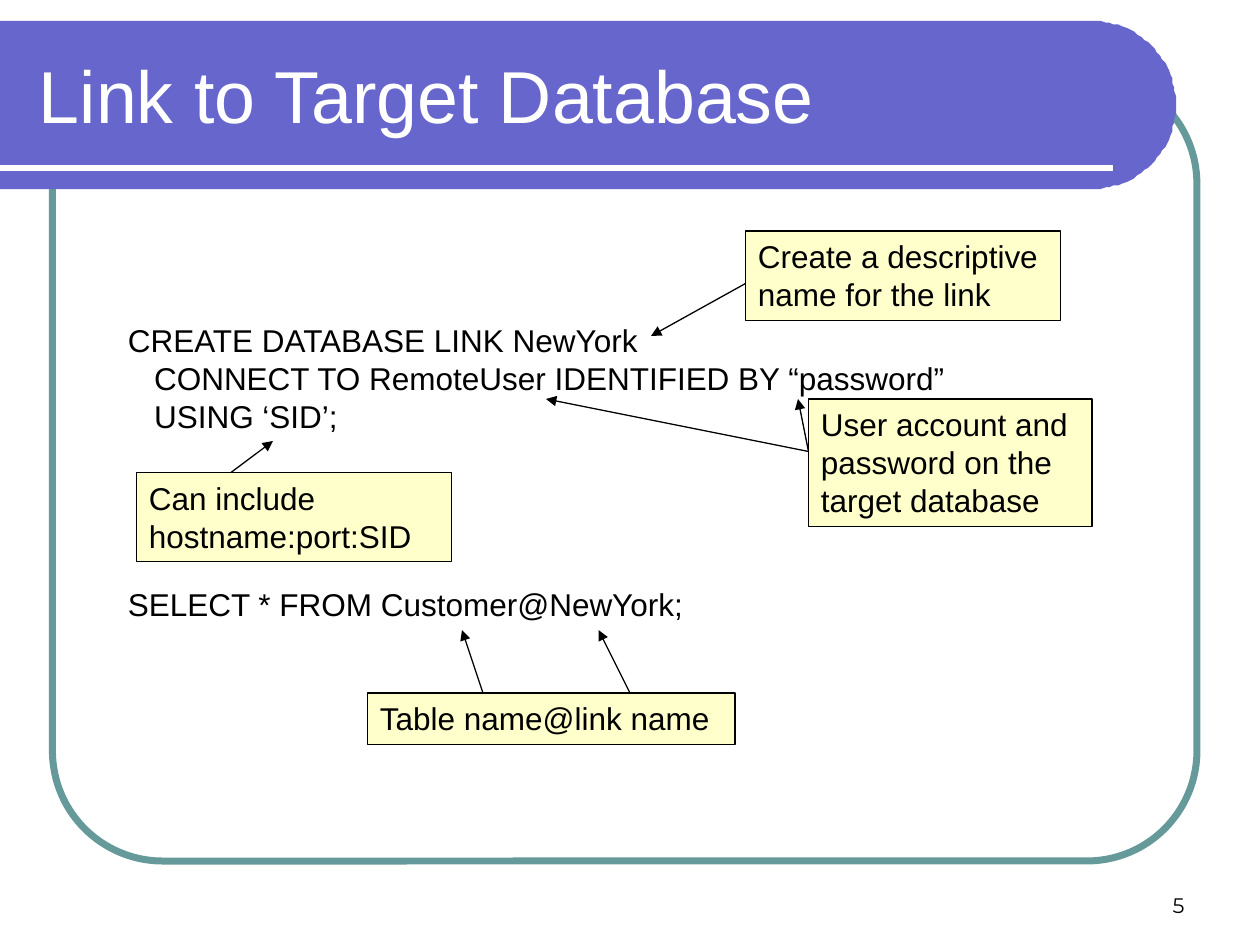
from math import cos, pi, sin
from typing import NamedTuple

from lxml.etree import SubElement
from pptx import Presentation
from pptx.dml.color import RGBColor
from pptx.enum.shapes import MSO_CONNECTOR as Conn, MSO_SHAPE as Shape
from pptx.enum.text import MSO_ANCHOR as Anchor, PP_ALIGN as Align
from pptx.oxml.ns import qn
from pptx.util import Pt

COLORS = {"band": "6666CC", "frame": "669999", "note": "FFFFCC",
          "white": "FFFFFF", "black": "000000"}


class Callout(NamedTuple):
    text: str
    left: float
    top: float
    width: float
    height: float


class Line(NamedTuple):
    x1: float
    y1: float
    x2: float
    y2: float


class CodeLine(NamedTuple):
    text: str
    indent: float = 0
    before: float = 0


CODE = [
    CodeLine("CREATE DATABASE LINK NewYork"),
    CodeLine("CONNECT TO RemoteUser IDENTIFIED BY “password”", indent=15),
    CodeLine("USING ‘SID’;", indent=15),
    CodeLine("SELECT * FROM Customer@NewYork;", before=86),
]
CALLOUTS = [
    Callout("Create a descriptive name for the link", 426, 132, 180, 51),
    Callout("User account and password on the target database", 462, 228, 162, 72.7),
    Callout("Can include hostname:port:SID", 78, 270, 180, 51),
    Callout("Table name@link name", 210, 396, 210, 29.3),
]
ARROWS = [
    Line(132, 270, 156, 252),
    Line(462, 258, 312, 228),
    Line(462, 258, 456, 228),
    Line(426, 162, 372, 192),
    Line(276, 396, 264, 360),
    Line(360, 396, 342, 360),
]


def rgb(name: str) -> RGBColor:
    return RGBColor.from_string(COLORS[name])


def set_font(p, size: float, color: str = "black", name: str = "Arial") -> None:
    for r in p.runs:
        r.font.size, r.font.name = Pt(size), name
        r.font.color.rgb = rgb(color)


def set_line(s, color: str, width: float) -> None:
    s.line.color.rgb = rgb(color)
    s.line.width = Pt(width)


def add_line(shapes, line: Line, color: str, width: float, arrow: bool = False) -> None:
    s = shapes.add_connector(Conn.STRAIGHT, *map(Pt, line))
    set_line(s, color, width)
    if arrow:
        SubElement(s.line._get_or_add_ln(), qn("a:tailEnd"), type="triangle")
    SubElement(s._element.spPr, qn("a:effectLst"))


def add_frame(shapes) -> None:
    s = shapes.add_shape(Shape.ROUNDED_RECTANGLE, Pt(30), Pt(42), Pt(654), Pt(450))
    s.adjustments[0] = 0.14
    s.shadow.inherit = False
    s.fill.background()
    set_line(s, "frame", 4)


def add_band(shapes) -> None:
    """Draw the title band, straight on the left and a half circle on the right."""
    x, y, radius, steps = 624, 60, 48, 60
    angles = [pi * i / steps - pi / 2 for i in range(steps + 1)]
    arc = [(x + radius * cos(a), y + radius * sin(a)) for a in angles]
    builder = shapes.build_freeform(0, y - radius, scale=Pt(1))
    builder.add_line_segments(arc + [(0, y + radius)], close=True)
    s = builder.convert_to_shape()
    s.shadow.inherit = False
    s.fill.solid()
    s.fill.fore_color.rgb = rgb("band")
    s.line.fill.background()


def place_title(shapes, text: str) -> None:
    s = shapes.title
    shapes._spTree.append(s._element)  # in front of the band
    s.left, s.top, s.width, s.height = Pt(15), Pt(18), Pt(631.5), Pt(72)
    tf = s.text_frame
    tf.text = text
    tf.vertical_anchor = Anchor.MIDDLE
    tf.paragraphs[0].alignment = Align.LEFT
    set_font(tf.paragraphs[0], 42, "white")


def add_page_number(shapes, number: str) -> None:
    tf = shapes.add_textbox(Pt(516), Pt(492), Pt(168), Pt(36)).text_frame
    tf.word_wrap = True
    tf.vertical_anchor = Anchor.BOTTOM
    tf.text = number
    tf.paragraphs[0].alignment = Align.RIGHT
    set_font(tf.paragraphs[0], 12, name="Montserrat")


def add_code(shapes, lines: list[CodeLine]) -> None:
    tf = shapes.add_textbox(Pt(66), Pt(180), Pt(540), Pt(181.5)).text_frame
    tf.word_wrap = True
    tf.text = "\n".join(line.text for line in lines)
    for p, line in zip(tf.paragraphs, lines):
        p.space_before = Pt(line.before)
        p._p.get_or_add_pPr().set("marL", str(Pt(line.indent)))
        set_font(p, 18)


def add_callout(shapes, c: Callout) -> None:
    s = shapes.add_shape(Shape.RECTANGLE, Pt(c.left), Pt(c.top), Pt(c.width), Pt(c.height))
    s.shadow.inherit = False
    s.fill.solid()
    s.fill.fore_color.rgb = rgb("note")
    set_line(s, "black", 0.75)
    tf = s.text_frame
    tf.word_wrap = True
    tf.vertical_anchor = Anchor.TOP
    tf.text = c.text
    tf.paragraphs[0].alignment = Align.LEFT
    set_font(tf.paragraphs[0], 18)


def main() -> None:
    prs = Presentation()
    prs.slide_width, prs.slide_height = Pt(720), Pt(540)
    shapes = prs.slides.add_slide(prs.slide_layouts[5]).shapes
    add_frame(shapes)
    add_band(shapes)
    add_line(shapes, Line(0, 96, 636, 96), "white", 3)
    add_page_number(shapes, "5")
    place_title(shapes, "Link to Target Database")
    add_code(shapes, CODE)
    for callout in CALLOUTS:
        add_callout(shapes, callout)
    for arrow in ARROWS:
        add_line(shapes, arrow, "black", 0.75, arrow=True)
    prs.save("out.pptx")


if __name__ == "__main__":
    main()
